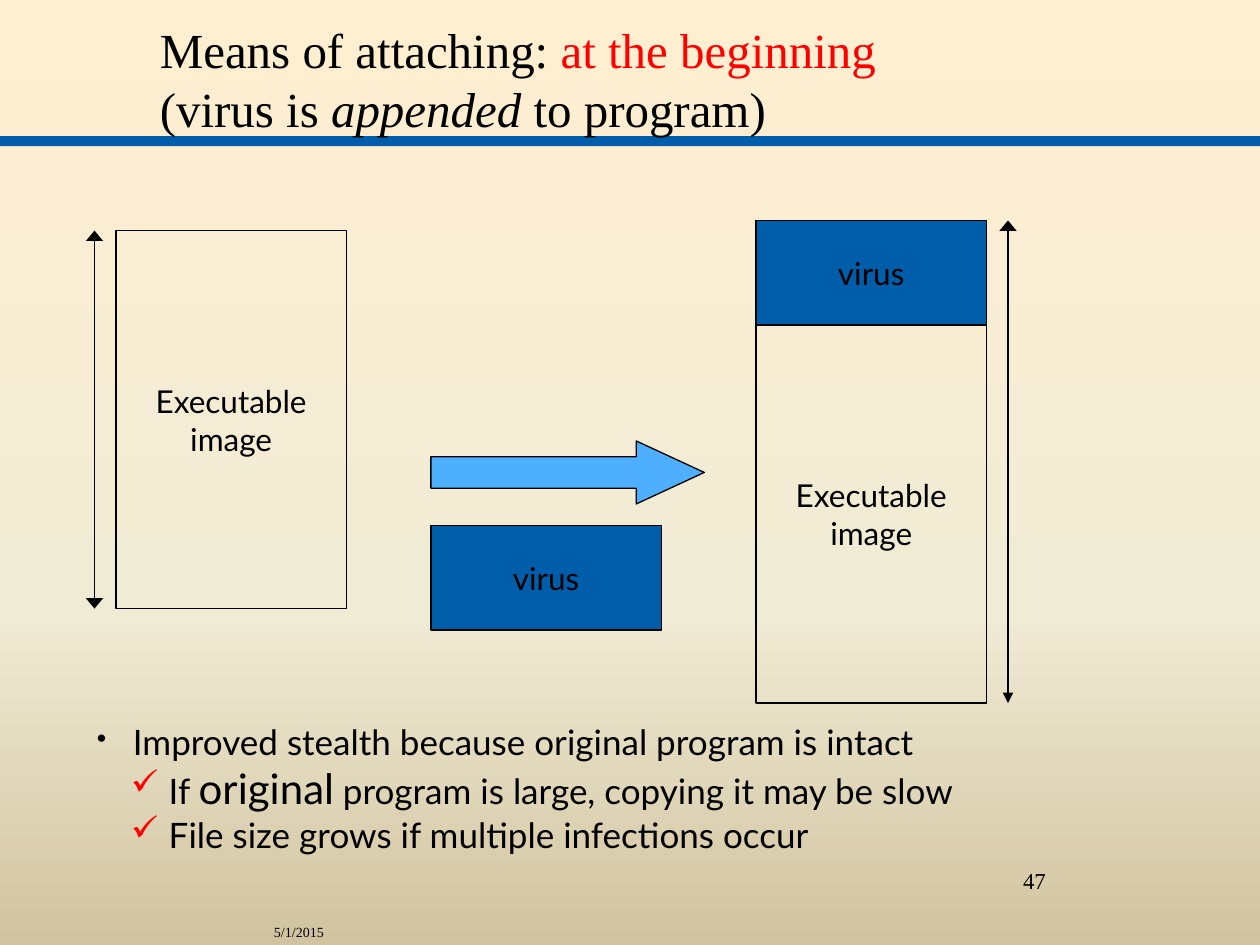
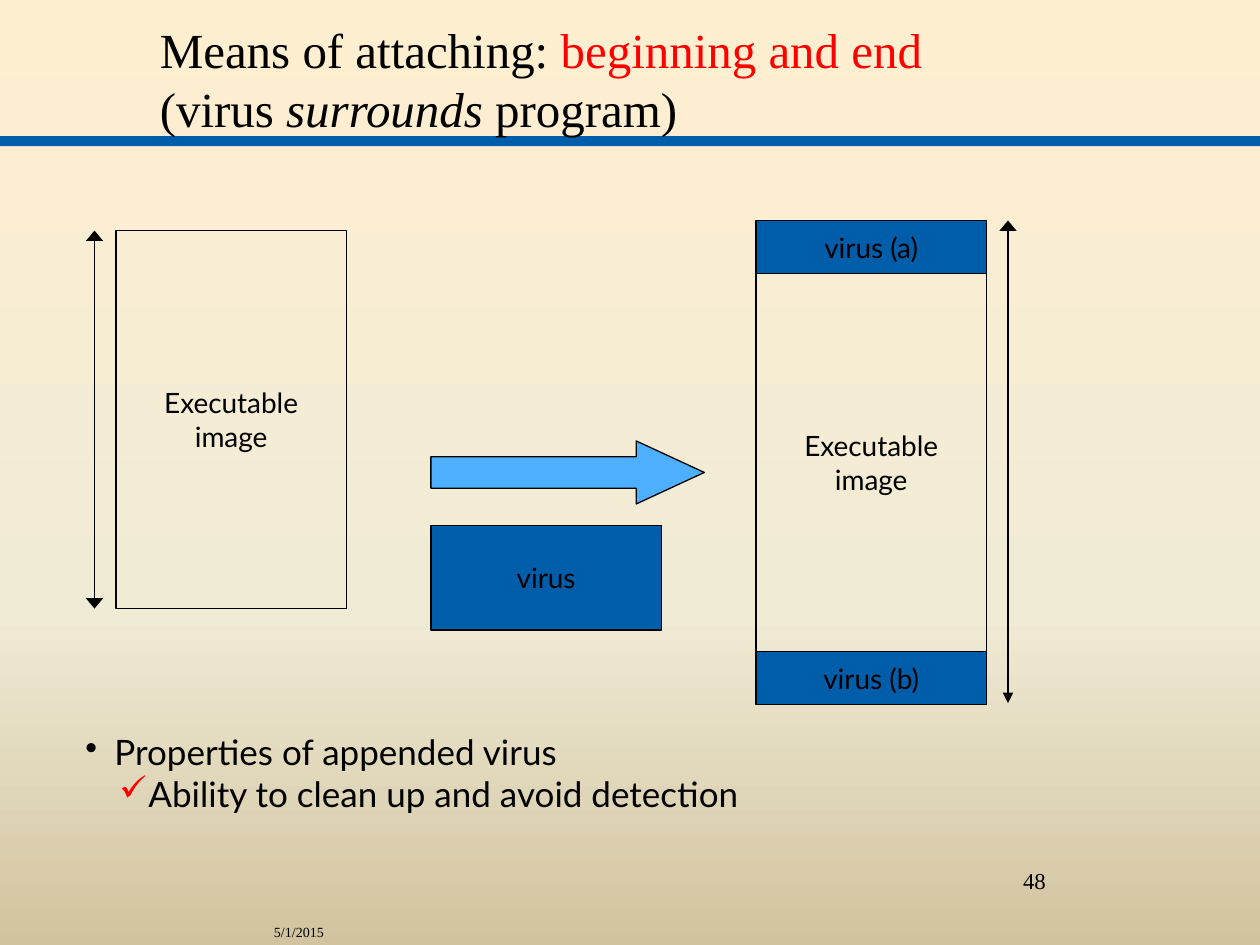
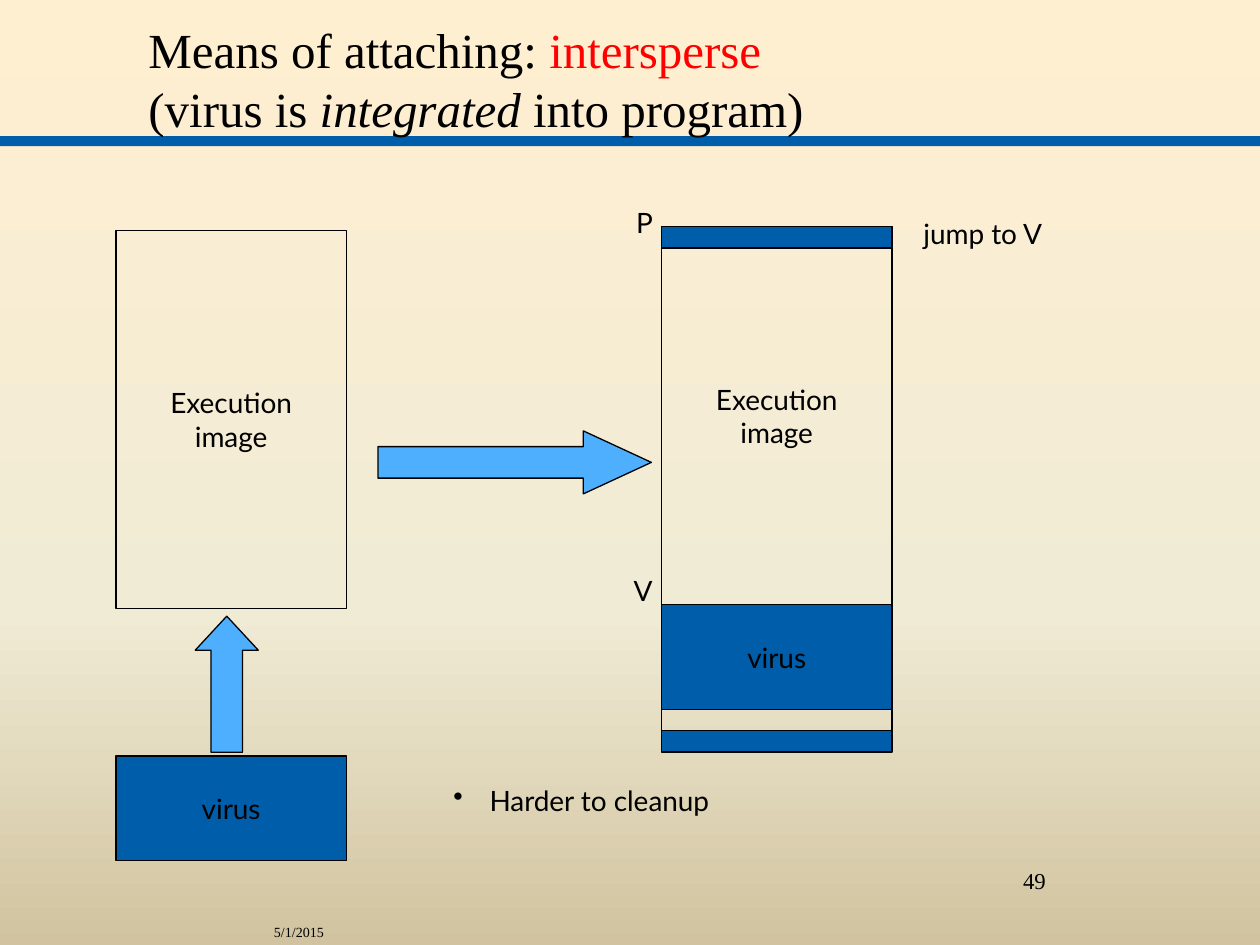
from lxml import etree
from pptx import Presentation
from pptx.dml.color import RGBColor
from pptx.enum import shapes, text
from pptx.oxml import ns
from pptx.util import Inches, Pt

BLACK = RGBColor(0, 0, 0)
RED = RGBColor(255, 0, 0)
BLUE = RGBColor(0x00, 0x5D, 0xAA)
SKY = RGBColor(0x4F, 0xAF, 0xFF)
STOPS = [(0, "FFEFD1"), (65, "F0EBD5"), (100, "D1C39F")]
SERIF, SANS = "Times New Roman", "Lato"
LEFT, CENTER, RIGHT = text.PP_ALIGN.LEFT, text.PP_ALIGN.CENTER, text.PP_ALIGN.RIGHT

DATE = "5/1/2015"
WIDE, TALL, HIGH, HALF, THIN = 1.83, 3, 0.83, 0.42, 0.17
EXE = ["Executable", "image"]
RUN = ["Execution", "image"]
VIRUS = ["virus"]
DOT = {"sign": "•", "margin": 0.23}
TICK = {"sign": "✓", "margin": 0.5, "tint": "FF0000"}

SLIDES = [
    {
        "page": "47", "left": 1.17, "size": 18,
        "title": ("at the beginning", "(virus is ", "appended", " to program)"),
        "stacks": [
            (0.92, 1.83, [(EXE, TALL, None)]),
            (3.42, 4.17, [(VIRUS, HIGH, BLUE)]),
            (6, 1.75, [(VIRUS, HIGH, BLUE), (EXE, TALL, None)]),
        ],
        "arrows": [(3.42, 3.5, 2.17, 1.08, 0)],
        "spans": [(0.75, 1.83, 4.83, "lg"), (8, 1.75, 5.58, "med")],
        "labels": [],
        "notes": (0.67, 5.67, 8.7, 1.18, 20, [
            (DOT, [(" ", {"size": 16}), "Improved stealth because original program is intact"]),
            (TICK, [" If ", ("original", {"size": 24}), " program is large, copying it may be slow"]),
            (TICK, [" File size grows if multiple infections occur"]),
        ]),
    },
    {
        "page": "48", "left": 1.17, "size": 16,
        "title": ("beginning and end ", "(virus ", "surrounds", " program)"),
        "stacks": [
            (0.92, 1.83, [(EXE, TALL, None)]),
            (3.42, 4.17, [(VIRUS, HIGH, BLUE)]),
            (6, 1.75, [(["virus (a)"], HALF, BLUE), (EXE, TALL, None),
                       (["virus (b)"], HALF, BLUE)]),
        ],
        "arrows": [(3.42, 3.5, 2.17, 1.08, 0)],
        "spans": [(0.75, 1.83, 4.83, "lg"), (8, 1.75, 5.58, "med")],
        "labels": [],
        "notes": (0.58, 5.75, 8.7, 0.77, 20, [
            (DOT, ["Properties of appended virus"]),
            (TICK, ["Ability to clean up and avoid detection"]),
        ]),
    },
    {
        "page": "49", "left": 1.08, "size": 16,
        "title": ("intersperse", "(virus is ", "integrated", " into program)"),
        "stacks": [
            (0.92, 1.83, [(RUN, TALL, None)]),
            (0.92, 6, [(VIRUS, HIGH, BLUE)]),
            (5.25, 1.8, [(RUN, TALL, None), (VIRUS, HIGH, BLUE),
                         ([], THIN, None), ([], THIN, BLUE)]),
            (5.25, 1.8, [([], THIN, BLUE)]),
        ],
        "arrows": [(3, 3.42, 2.17, 1.08, 0), (1.26, 5.18, 1.08, 0.54, 270)],
        "spans": [],
        "labels": [("P", 4.95, 1.58, 0.39), ("V", 4.93, 4.5, 0.4),
                   ("jump to V", 7.23, 1.67, 1.64)],
        "notes": (3.5, 6.17, 5.58, 0.5, 16, [(DOT, [" Harder to cleanup"])]),
    },
]


def add(parent, tag, **attrs):
    node = etree.SubElement(parent, ns.qn(tag))
    for key, val in attrs.items():
        node.set(key, str(val))
    return node


def bullet(para, sign, margin, tint=None):
    props = para._p.get_or_add_pPr()
    props.set("marL", str(Inches(margin)))
    props.set("indent", str(-Inches(DOT["margin"])))
    if tint:
        add(add(props, "a:buClr"), "a:srgbClr", val=tint)
    add(props, "a:buChar", char=sign)


def write(para, runs, size=16, font=SANS, color=BLACK, align=LEFT):
    para.alignment = align
    for item in runs:
        if item == "\n":
            para.add_line_break()
            continue
        words, form = (item, {}) if isinstance(item, str) else item
        run = para.add_run()
        run.text = words
        run.font.name = font
        run.font.size = Pt(form.get("size", size))
        run.font.color.rgb = form.get("color", color)
        if form.get("italic"):
            run.font.italic = True


def fill(frame, paras, **form):
    for pos, runs in enumerate(paras):
        para = frame.add_paragraph() if pos else frame.paragraphs[0]
        write(para, runs, **form)


def box(slide, left, top, width, height, paras, wrap=True, middle=False, **form):
    frame = slide.shapes.add_textbox(*map(Inches, (left, top, width, height))).text_frame
    frame.word_wrap = wrap
    if middle:
        frame.vertical_anchor = text.MSO_ANCHOR.MIDDLE
    fill(frame, paras, **form)
    return frame


def block(slide, kind, left, top, width, height, color, edge=True):
    shape = slide.shapes.add_shape(kind, *map(Inches, (left, top, width, height)))
    shape.shadow.inherit = False
    if color is None:
        shape.fill.background()
    else:
        shape.fill.solid()
        shape.fill.fore_color.rgb = color
    if edge:
        shape.line.color.rgb = BLACK
        shape.line.width = Pt(0.75)
    else:
        shape.line.fill.background()
    return shape


def stack(slide, left, top, parts, size):
    for lines, height, color in parts:
        shape = block(slide, shapes.MSO_SHAPE.RECTANGLE, left, top, WIDE, height, color)
        frame = shape.text_frame
        frame.word_wrap = False
        frame.vertical_anchor = text.MSO_ANCHOR.MIDDLE
        fill(frame, [[line] for line in lines], size=size, align=CENTER)
        top += height


def arrow(slide, left, top, width, head, turn):
    shape = block(slide, shapes.MSO_SHAPE.RIGHT_ARROW, left, top, width, 0.5, SKY)
    shape.adjustments[1] = head
    shape.rotation = turn


def span(slide, left, top, end, tip):
    line = slide.shapes.add_connector(
        shapes.MSO_CONNECTOR.STRAIGHT, *map(Inches, (left, top, left, end)))
    line.line.color.rgb = BLACK
    line.line.width = Pt(0.75)
    edge = line.line._get_or_add_ln()
    add(edge, "a:headEnd", type="triangle", w="lg", len="med")
    add(edge, "a:tailEnd", type="triangle", w=tip, len="med")
    add(line._element.spPr, "a:effectLst")


def backdrop(master):
    paint = master.background.fill
    paint.gradient()
    paint.gradient_angle = 270
    stops = paint.gradient_stops._gsLst
    for old in list(stops):
        stops.remove(old)
    for pos, tint in STOPS:
        add(add(stops, "a:gs", pos=pos * 1000), "a:srgbClr", val=tint)


def build(deck, data):
    slide = deck.slides.add_slide(deck.slide_layouts[6])
    block(slide, shapes.MSO_SHAPE.RECTANGLE, 0, 1.08, 10, 0.08, BLUE, edge=False)
    box(slide, 0.67, 7.28, 2, 0.17, [[DATE]], size=8, font=SERIF, align=RIGHT)
    box(slide, 7.17, 6.83, 2.08, 0.5, [[data["page"]]], size=13, font=SERIF, align=CENTER)
    place, start, verb, end = data["title"]
    title = ["Means of attaching: ", (place, {"color": RED}), "\n",
             start, (verb, {"italic": True}), end]
    box(slide, data["left"], 0, 8.08, 1.25, [title], middle=True, size=28, font=SERIF)
    for left, top, parts in data["stacks"]:
        stack(slide, left, top, parts, data["size"])
    for spot in data["arrows"]:
        arrow(slide, *spot)
    for spot in data["spans"]:
        span(slide, *spot)
    for word, left, top, width in data["labels"]:
        box(slide, left, top, width, 0.5, [[word]], wrap=False)
    *area, size, notes = data["notes"]
    frame = box(slide, *area, [runs for _, runs in notes], size=size)
    for para, (mark, _) in zip(frame.paragraphs, notes):
        bullet(para, **mark)


def main():
    deck = Presentation()
    deck.slide_width, deck.slide_height = Inches(10), Inches(7.5)
    backdrop(deck.slide_master)
    for data in SLIDES:
        build(deck, data)
    deck.save("out.pptx")


if __name__ == "__main__":
    main()
